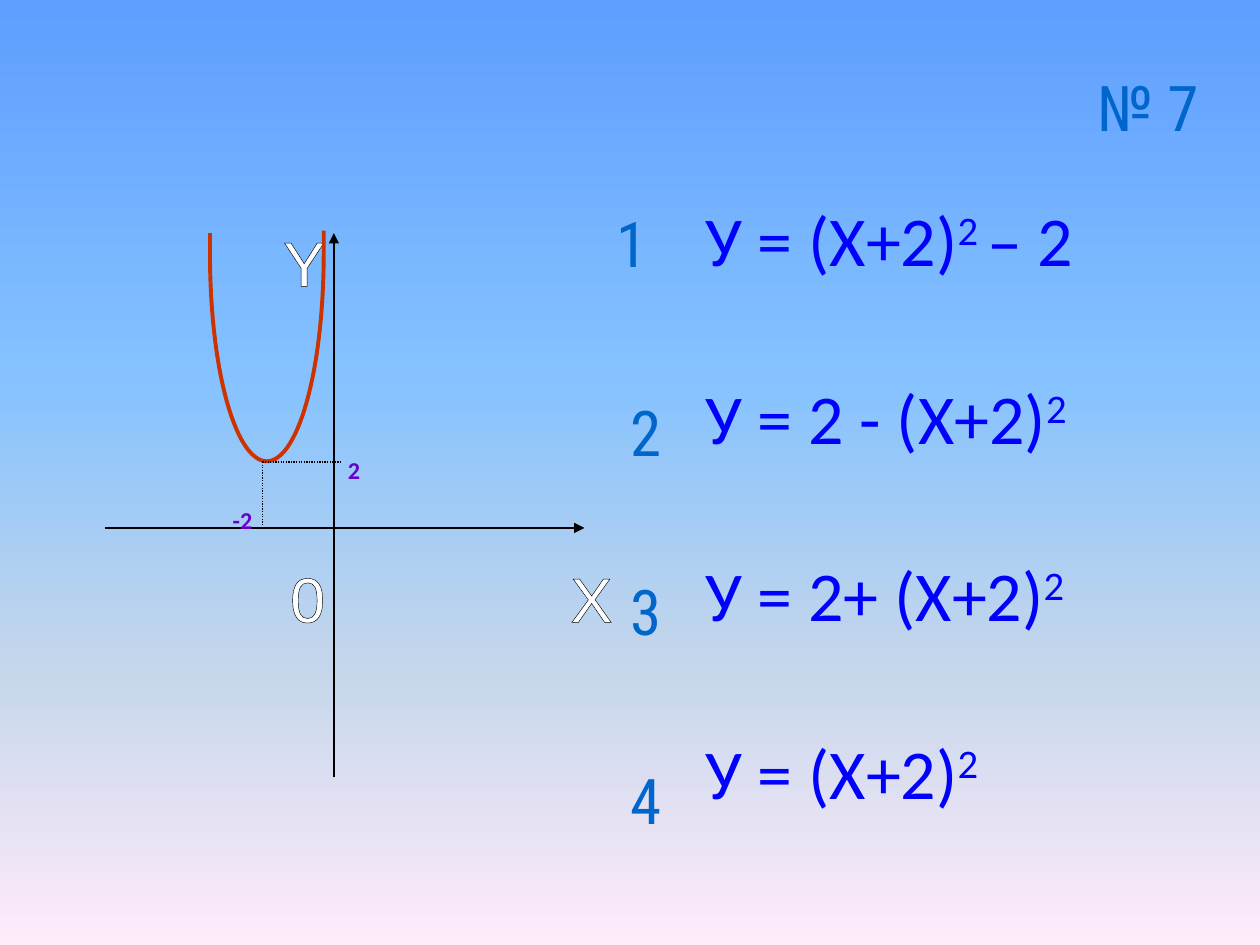
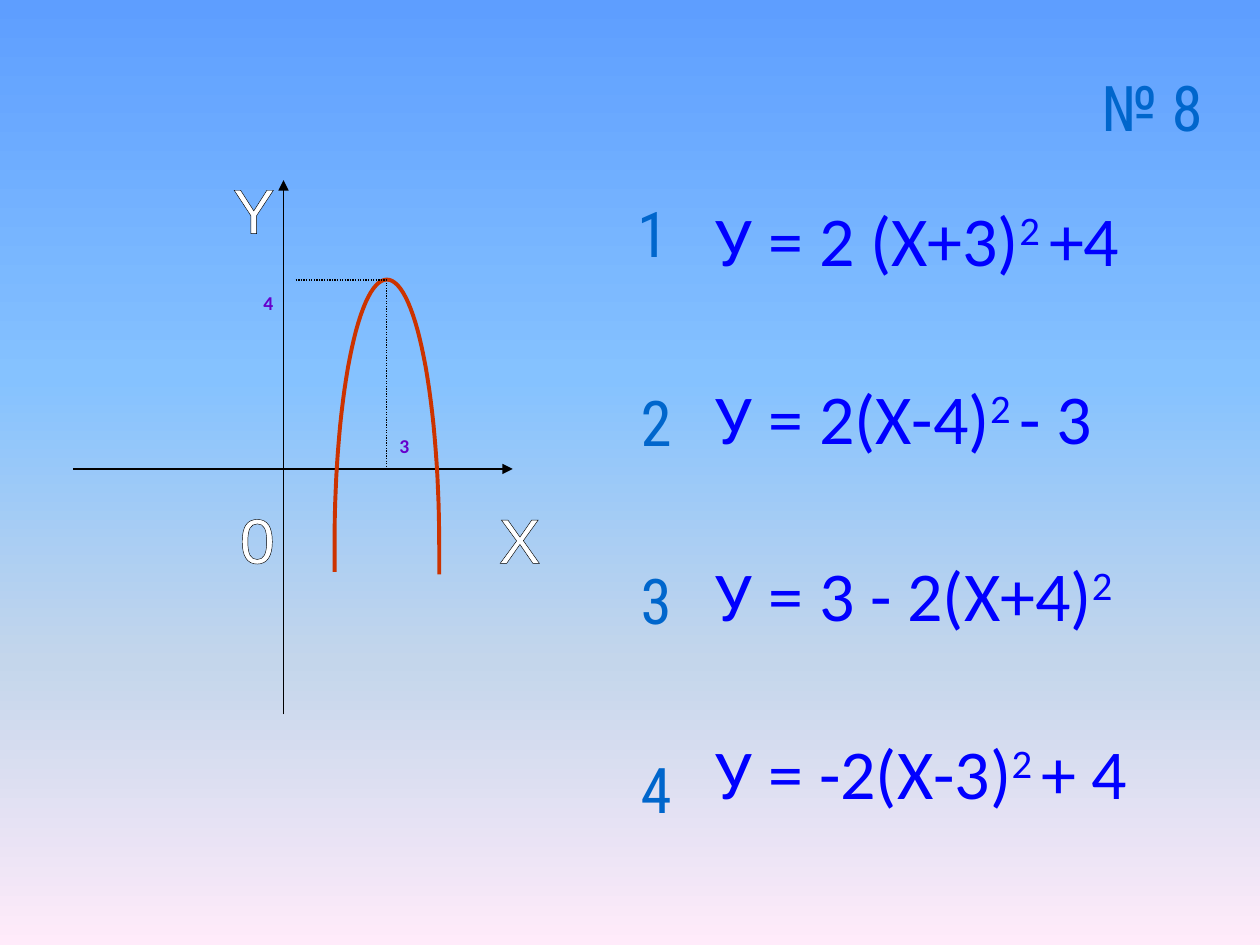
import math

import lxml.etree
import pptx
import pptx.dml.color
import pptx.enum.dml
import pptx.enum.shapes
import pptx.enum.text
import pptx.oxml.ns
import pptx.util

Pt = pptx.util.Pt
RGB = pptx.dml.color.RGBColor
qn = pptx.oxml.ns.qn

BLACK, WHITE = RGB(0, 0, 0), RGB(255, 255, 255)
BLUE, NUMBER, NUMBER_EDGE = RGB(0, 0, 255), RGB(0, 0x66, 0xCC), RGB(0x99, 0xCC, 0xFF)
PURPLE, CURVE = RGB(0x66, 0, 0xCC), RGB(0xCC, 0x33, 0)
SKY = [(0, RGB(0x5E, 0x9E, 0xFF)), (40, RGB(0x85, 0xC2, 0xFF)),
       (70, RGB(0xC4, 0xD6, 0xEB)), (100, RGB(0xFF, 0xEB, 0xFA))]
NUMBER_TOPS = (114, 222, 324, 432)


def add_color(parent, color):
    lxml.etree.SubElement(parent, qn("a:srgbClr"), val=str(color))


class Quiz:
    """Quiz slides that pair a parabola with four candidate equations."""

    def __init__(self):
        self.prs = pptx.Presentation()
        self.prs.slide_width, self.prs.slide_height = Pt(720), Pt(540)
        self.s = None
        self.paint_background()

    def paint_background(self):
        master = self.prs.slide_master
        fill = master.background.fill
        fill.gradient()
        fill.gradient_angle = 270
        stops = master.element.find(".//" + qn("a:gsLst"))
        for stop in list(stops):
            stops.remove(stop)
        for percent, color in SKY:
            add_color(lxml.etree.SubElement(stops, qn("a:gs"), pos=str(percent * 1000)), color)

    def new_slide(self):
        self.s = self.prs.slides.add_slide(self.prs.slide_layouts[6])

    def text(self, text, x, y, w, h, *, font="Calibri", size=40, color=BLUE, bold=False,
             align="LEFT", edge=None, edge_width=0.75, line=1.0, gap=0):
        """Lines of text; a part between two ^ marks is raised."""
        tf = self.s.shapes.add_textbox(Pt(x), Pt(y), Pt(w), Pt(h)).text_frame
        tf.word_wrap = True
        tf.margin_left = tf.margin_right = tf.margin_top = tf.margin_bottom = 0
        for i, row in enumerate(text.split("\n")):
            p = tf.add_paragraph() if i else tf.paragraphs[0]
            p.alignment = getattr(pptx.enum.text.PP_ALIGN, align)
            p.line_spacing = line
            p.space_before = Pt(gap if i else 0)
            for j, part in enumerate(row.split("^")):
                if not part:
                    continue
                r = p.add_run()
                r.text = part
                r.font.name, r.font.size, r.font.bold = font, Pt(size), bold
                r.font.color.rgb = color
                rpr = r.font._element
                if j % 2:
                    rpr.set("baseline", "30000")
                if edge is not None:
                    ln = lxml.etree.Element(qn("a:ln"), w=str(Pt(edge_width)))
                    add_color(lxml.etree.SubElement(ln, qn("a:solidFill")), edge)
                    rpr.insert(0, ln)

    def centered(self, text, x, y, w=100, h=44, **style):
        self.text(text, x - w / 2, y, w, h, align="CENTER", **style)

    def number(self, text, x, y):
        self.centered(text, x, y + 3, font="Roboto Condensed", size=36, color=NUMBER,
                      edge=NUMBER_EDGE, edge_width=1.5)

    def letter(self, text, x, y):
        self.centered(text, x, y, w=40, font="Arial", size=36, color=WHITE, edge=BLACK)

    def mark(self, text, x, y, size):
        self.centered(text, x, y, w=30, h=18, size=size, color=PURPLE, bold=True)

    def line(self, x1, y1, x2, y2, arrow=False, dotted=False):
        c = self.s.shapes.add_connector(pptx.enum.shapes.MSO_CONNECTOR.STRAIGHT,
                                        Pt(x1), Pt(y1), Pt(x2), Pt(y2))
        c.line.color.rgb, c.line.width = BLACK, Pt(0.75)
        if dotted:
            c.line.dash_style = pptx.enum.dml.MSO_LINE.ROUND_DOT
        if arrow:
            lxml.etree.SubElement(c.line._get_or_add_ln(), qn("a:tailEnd"), type="triangle")
        lxml.etree.SubElement(c._element.spPr, qn("a:effectLst"))

    def axes(self, x, y, left, right, top, bottom):
        self.line(x, bottom, x, top, arrow=True)
        self.line(left, y, right, y, arrow=True)
        self.letter("X", right + 4, y + 18)
        self.letter("Y", x - 17, top - 5.5)
        self.letter("0", x - 15, y + 18)

    def parabola(self, left, right, tip, base, left_end, right_end):
        """Half an ellipse from base to tip, with a short arm at each side."""
        middle, radius = (left + right) / 2, (right - left) / 2
        angles = [math.pi * i / 60 for i in range(61)]
        arc = [(Pt(middle - radius * math.cos(a)), Pt(base + (tip - base) * math.sin(a)))
               for a in angles]
        outline = self.s.shapes.build_freeform(Pt(left), Pt(left_end))
        outline.add_line_segments(arc + [(Pt(right), Pt(right_end))], close=False)
        sp = outline.convert_to_shape()
        sp.shadow.inherit = False
        sp.fill.background()
        sp.line.color.rgb, sp.line.width = CURVE, Pt(2.25)

    def question(self, title, title_x, equations, x, first_x, number_x, rise):
        self.number(title, title_x, 36)
        self.text("\n".join(equations), x, 117.6, 300, 380, line=0.9, gap=58.4)
        for i, top in enumerate(NUMBER_TOPS):
            self.number(str(i + 1), number_x if i else first_x, top - rise)


def main():
    q = Quiz()

    q.new_slide()
    q.question("№ 7", 656, ["У = (Х+2)^2 ^– 2", "У = 2 - (Х+2)^2", "У = 2+ (Х+2)^2",
                            "У = (Х+2)^2"], 403, 361, 369, 0)
    q.axes(190.8, 301.7, 60, 334, 133.2, 444.2)
    q.parabola(120, 185, 263.6, 145.4, 133.2, 131.8)
    q.line(150, 264, 150, 300, dotted=True)
    q.line(150, 264, 195, 264, dotted=True)
    q.mark("2", 202.3, 260.4, 13.8)
    q.mark("-2", 138.6, 289, 13.8)

    q.new_slide()
    q.question("№ 8", 658.4, ["У = 2 (Х+3)^2 ^+4", "У = 2(Х-4)^2 ^- 3", "У = 3 - 2(Х+4)^2",
                              "У = -2(Х-3)^2 ^+ 4"], 409, 373, 375, 6)
    q.axes(162, 268, 42, 293, 103, 408.2)
    q.parabola(191.2, 251, 159.8, 311.8, 326.9, 328.3)
    q.line(221, 160, 221, 268.5, dotted=True)
    q.line(169, 160, 221, 160, dotted=True)
    q.mark("4", 153.4, 166, 11.2)
    q.mark("3", 231.1, 247.8, 11.2)

    q.prs.save("out.pptx")


if __name__ == "__main__":
    main()
